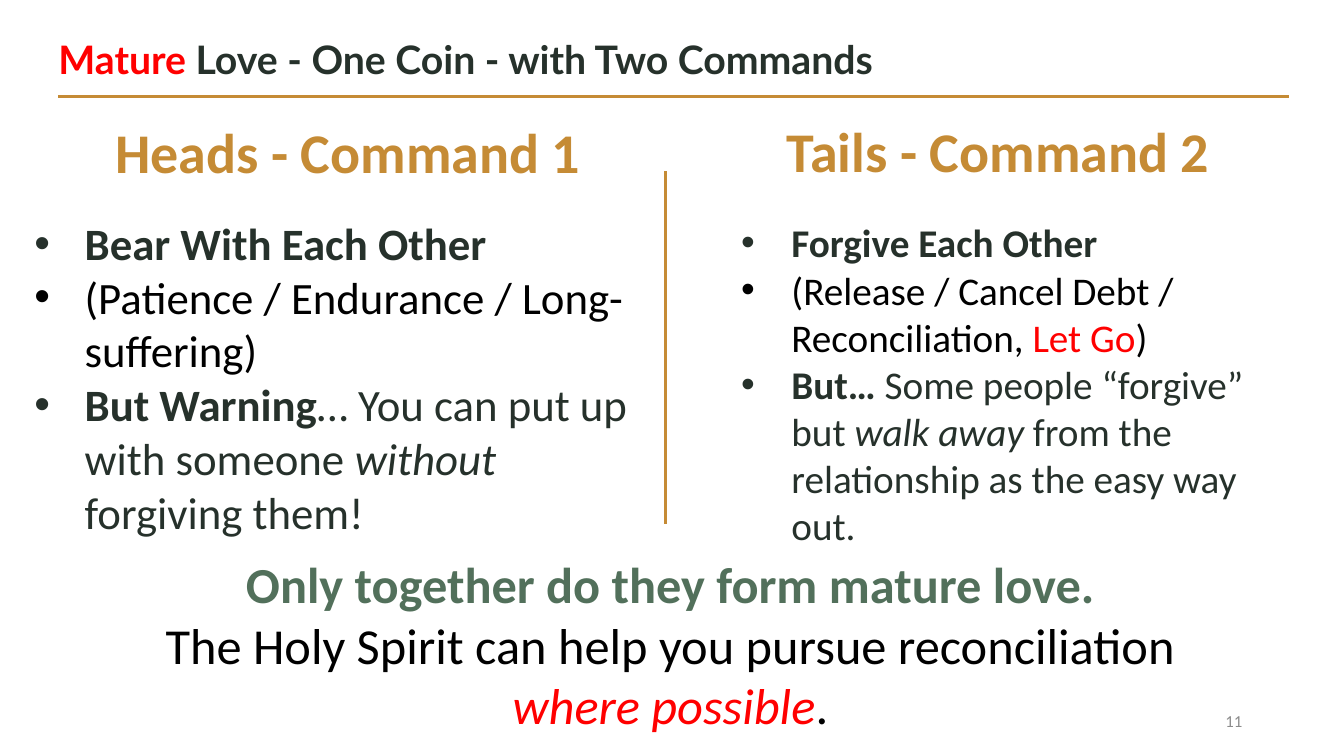
from lxml import etree
from pptx import Presentation
from pptx import util as u
from pptx.dml.color import RGBColor
from pptx.enum import shapes, text
from pptx.oxml import ns

GOLD, INK, GREEN = "C58B35", "26312B", "52705B"
RED, BLACK, GREY = "FF0000", "000000", "8C8C8C"
LEFT, CENTER, RIGHT = text.PP_ALIGN.LEFT, text.PP_ALIGN.CENTER, text.PP_ALIGN.RIGHT


def colour(value):
    """Turn a hex string into a colour."""
    return RGBColor.from_string(value)


def add_bullet(para):
    """Give a paragraph a round bullet with a hanging indent."""
    properties = para._p.get_or_add_pPr()
    indent = u.Inches(0.5)
    properties.set("marL", str(indent))
    properties.set("indent", str(-indent))
    etree.SubElement(properties, ns.qn("a:buFont")).set("typeface", "Arial")
    etree.SubElement(properties, ns.qn("a:buChar")).set("char", "•")


def fill_text(box, paragraphs, size, align=LEFT, bullets=False, font="Calibri", margin=0):
    """Write paragraphs of (words, colour, style) spans into a shape."""
    frame = box.text_frame
    layout = {"word_wrap": True, "auto_size": text.MSO_AUTO_SIZE.NONE,
              "vertical_anchor": text.MSO_ANCHOR.MIDDLE,
              "margin_left": u.Inches(margin), "margin_right": u.Inches(margin),
              "margin_top": 0, "margin_bottom": 0}
    for name, value in layout.items():
        setattr(frame, name, value)
    for index, spans in enumerate(paragraphs):
        para = frame.add_paragraph() if index else frame.paragraphs[0]
        para.alignment = align
        if bullets:
            add_bullet(para)
        for words, hue, style in spans:
            span = para.add_run()
            span.text = words
            look = {"name": font, "size": u.Pt(size),
                    "bold": style == "bold", "italic": style == "italic"}
            for name, value in look.items():
                setattr(span.font, name, value)
            span.font.color.rgb = colour(hue)


def add_text(page, place, paragraphs, size, **options):
    """Add a text box at left, top, width and height in inches."""
    box = page.shapes.add_textbox(*map(u.Inches, place))
    fill_text(box, paragraphs, size, **options)


def add_rule(page, ends, width):
    """Add a straight gold line between two points in inches."""
    rule = page.shapes.add_connector(shapes.MSO_CONNECTOR.STRAIGHT, *map(u.Inches, ends))
    rule.line.color.rgb = colour(GOLD)
    rule.line.width = u.Pt(width)
    etree.SubElement(rule._element.spPr, ns.qn("a:effectLst"))


def add_title(page, place, spans):
    """Move and fill the title placeholder."""
    title = page.shapes.title
    for name, value in zip(("left", "top", "width", "height"), place):
        setattr(title, name, u.Inches(value))
    fill_text(title, [spans], 28, font="Lato")


def add_command(page, heading, heading_place, points, points_place, size):
    """Add one side of the coin: a gold heading over its bullet points."""
    add_text(page, heading_place, [[(heading, GOLD, "bold")]], 40, align=CENTER)
    add_text(page, points_place, points, size, bullets=True)


def main():
    """Build the slide and save it."""
    deck = Presentation()
    deck.slide_width, deck.slide_height = u.Inches(13.33), u.Inches(7.5)
    page = deck.slides.add_slide(deck.slide_layouts.get_by_name("Title Only"))

    add_title(page, (0.58, 0.34, 12.2, 0.48), [
        ("Mature", RED, "bold"),
        (" Love - One Coin - with Two Commands", INK, "bold")])
    add_rule(page, (0.58, 0.96, 12.78, 0.96), 1.8)

    bear_points = [
        [("Bear With Each Other", INK, "bold")],
        [("(Patience / Endurance / Long-suffering)", BLACK, "")],
        [("But Warning", INK, "bold"), ("… You can put up with someone ", INK, ""),
         ("without", INK, "italic"), (" forgiving them!", INK, "")]]
    add_command(page, "Heads - Command 1", (1, 1.3, 4.9, 0.4),
                bear_points, (0.34, 2.14, 5.93, 3.2), 32)

    forgive_points = [
        [("Forgive Each Other", INK, "bold")],
        [("(Release / Cancel Debt / Reconciliation, ", BLACK, ""),
         ("Let Go", RED, ""), (")", BLACK, "")],
        [("But… ", INK, "bold"), ("Some people “forgive” but ", INK, ""),
         ("walk away ", INK, "italic"),
         ("from the relationship as the easy way out.", INK, "")]]
    add_command(page, "Tails - Command 2", (7.45, 1.29, 4.9, 0.4),
                forgive_points, (7.35, 1.54, 5.1, 4.53), 28)

    add_rule(page, (6.6, 1.7, 6.6, 5.2), 2)
    add_text(page, (1.1, 5.64, 11.1, 1.5), [
        [("Only together do they form mature love.", GREEN, "bold")],
        [("The Holy Spirit can help you pursue reconciliation ", BLACK, ""),
         ("where possible", RED, "italic"), (".", BLACK, "")]], 36, align=CENTER)
    add_text(page, (9.42, 6.95, 3, 0.4), [[("11", GREY, "")]], 12,
             align=RIGHT, margin=0.1)

    deck.save("out.pptx")


if __name__ == "__main__":
    main()
